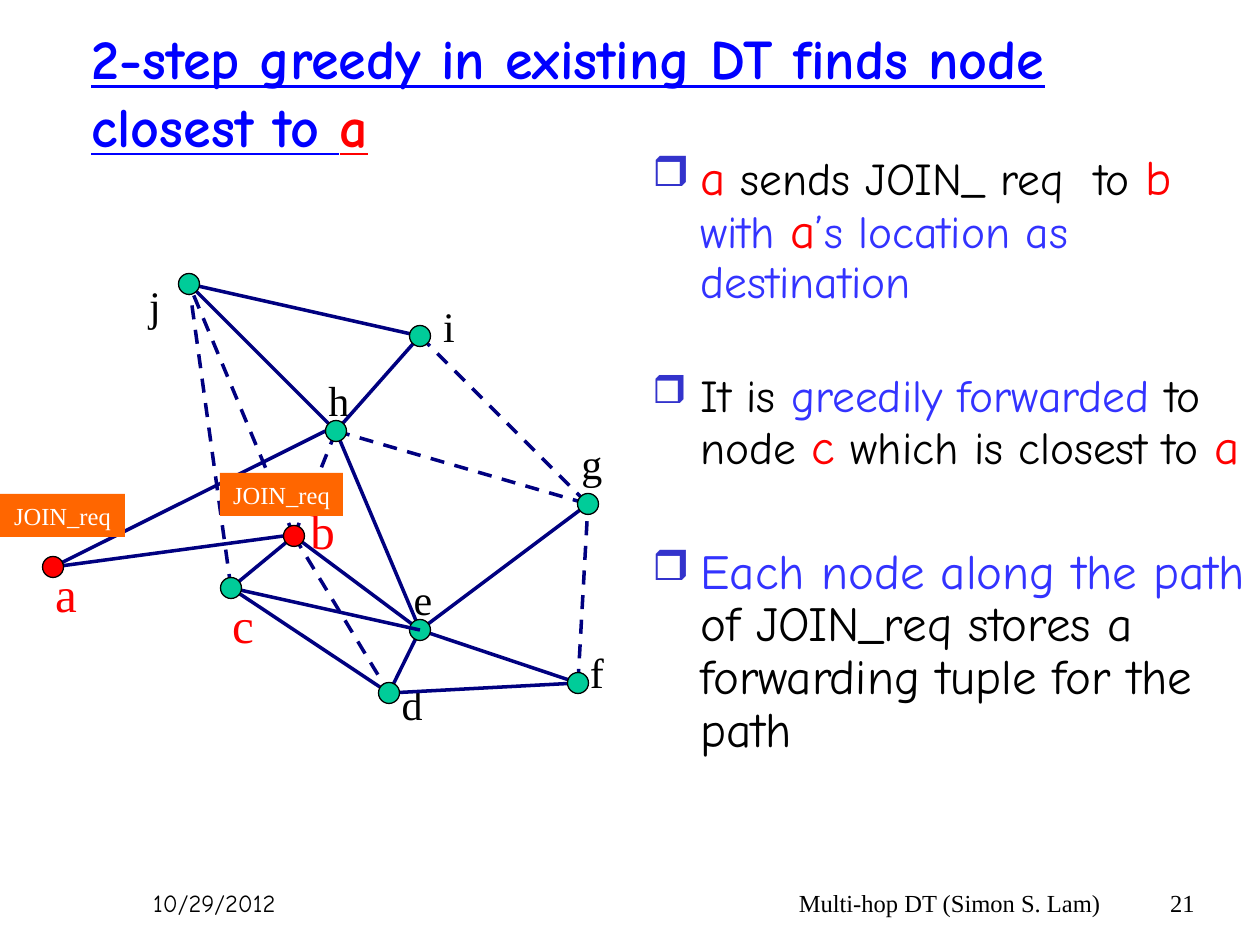
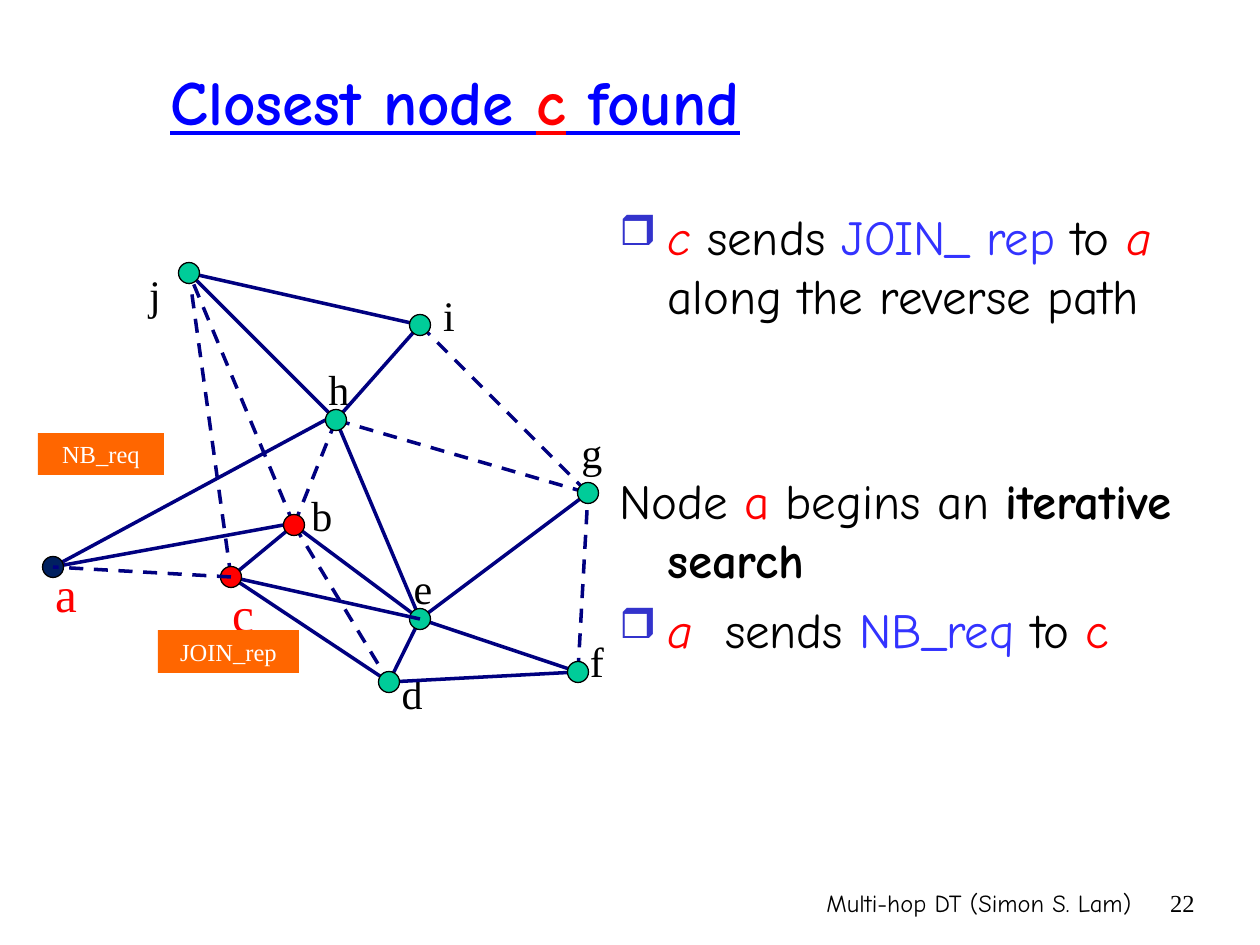
from lxml import etree
from pptx import Presentation
from pptx.dml.color import RGBColor
from pptx.enum.dml import MSO_LINE
from pptx.enum.shapes import MSO_CONNECTOR, MSO_SHAPE
from pptx.enum.text import MSO_ANCHOR, PP_ALIGN
from pptx.oxml.ns import qn
from pptx.util import Emu, Pt

LEFT, CENTER, RIGHT = PP_ALIGN.LEFT, PP_ALIGN.CENTER, PP_ALIGN.RIGHT
TOP, MIDDLE = MSO_ANCHOR.TOP, MSO_ANCHOR.MIDDLE
STRAIGHT, DASH = MSO_CONNECTOR.STRAIGHT, MSO_LINE.DASH
OVAL, RECTANGLE = MSO_SHAPE.OVAL, MSO_SHAPE.RECTANGLE

EMU_PER_PX = 914400 / 126
COMIC, TIMES = "Comic Neue", "Times New Roman"
COLORS = {
    "title": "0000FF", "red": "FF0000", "blue": "3333FF", "black": "000000",
    "white": "FFFFFF", "bullet": "3333CC", "edge": "000080",
    "green": "00CC99", "navy": "002060", "tag": "FF6600",
}

# Node name: centre x, centre y, label centre x, label top
NODES = {
    "d": (389, 693, 412, 672), "f": (578, 683, 597, 640),
    "e": (420, 630, 423, 567), "g": (588, 504, 592, 431),
    "i": (420, 336, 449, 294), "j": (189, 284, 155, 273),
    "c": (231, 588, 243, 588), "h": (336, 431, 339, 368),
    "b": (294, 536, 322, 494),
}
JOINING = (53, 567, 66, 557)
DOT = 21
SOLID_EDGES = "hj cd cb be ed he df ef eg hi ji".split()
DASHED_EDGES = "cj bj bh bd fg hg ig".split()

# Run formats of the body text
RED, BLUE = {"color": "red"}, {"color": "blue"}
BIG_RED = {"color": "red", "size": 28}
ITALIC_RED = {"color": "red", "italic": True}
BOLD = {"bold": True}


def px(*lengths):
    return [Emu(round(length * EMU_PER_PX)) for length in lengths]


def rgb(name):
    return RGBColor.from_string(COLORS[name])


def format_run(run, font=TIMES, size=14, color="black", bold=False,
               italic=False, underline=False):
    run.font.name, run.font.size = font, Pt(size)
    run.font.color.rgb = rgb(color)
    run.font.bold, run.font.italic = bold, italic
    run.font.underline = underline


def add_runs(paragraph, runs, **style):
    """Each run is a string or a (string, format changes) pair."""
    for part in runs:
        words, changes = (part, {}) if isinstance(part, str) else part
        run = paragraph.add_run()
        run.text = words
        format_run(run, **{**style, **changes})


def add_text(slide, box, runs, align=LEFT, anchor=TOP, wrap=True, **style):
    frame = slide.shapes.add_textbox(*px(*box)).text_frame
    frame.word_wrap, frame.vertical_anchor = wrap, anchor
    frame.paragraphs[0].alignment = align
    add_runs(frame.paragraphs[0], runs, **style)
    return frame


def hang_indent(paragraph, bulleted):
    properties = paragraph._p.get_or_add_pPr()
    indent = px(48)[0]
    properties.set("marL", str(indent))
    properties.set("indent", str(-indent))
    if bulleted:
        color = etree.SubElement(properties, qn("a:buClr"))
        etree.SubElement(color, qn("a:srgbClr"), val=COLORS["bullet"])
        etree.SubElement(properties, qn("a:buSzPct"), val="85000")
        etree.SubElement(properties, qn("a:buChar"), char="❒")


def add_points(slide, box, points, line_spacing, size):
    """Each point is (space before in points, bulleted, runs)."""
    frame = add_text(slide, box, [])
    for number, (space, bulleted, runs) in enumerate(points):
        point = frame.add_paragraph() if number else frame.paragraphs[0]
        point.space_before, point.line_spacing = Pt(space), line_spacing
        hang_indent(point, bulleted)
        add_runs(point, runs, font=COMIC, size=size)


def add_title(slide, box, runs, size):
    add_text(slide, box, runs, anchor=MIDDLE, font=COMIC, size=size,
             color="title", bold=True, underline=True)


def add_footer(slide, right_edge, font, page):
    add_text(slide, (right_edge - 736, 882, 736, 63),
             ["Multi-hop DT (Simon S. Lam)"], align=RIGHT, font=font)
    add_text(slide, (1144, 882, 63, 63), [page], align=RIGHT)


def add_edge(slide, start, end, dashed=False):
    edge = slide.shapes.add_connector(STRAIGHT, *px(*start, *end))
    edge.line.color.rgb, edge.line.width = rgb("edge"), Pt(2)
    if dashed:
        edge.line.dash_style = DASH
    etree.SubElement(edge._element.spPr, qn("a:effectLst"))


def add_filled(slide, kind, box, fill):
    shape = slide.shapes.add_shape(kind, *px(*box))
    shape.shadow.inherit = False
    shape.fill.solid()
    shape.fill.fore_color.rgb = rgb(fill)
    return shape


def add_dot(slide, center, fill):
    x, y = center
    dot = add_filled(slide, OVAL, (x - DOT / 2, y - DOT / 2, DOT, DOT), fill)
    dot.line.color.rgb, dot.line.width = rgb("black"), Pt(0.75)


def add_tag(slide, box, message):
    tag = add_filled(slide, RECTANGLE, box, "tag")
    tag.line.fill.background()
    tag.text_frame.paragraphs[0].alignment = CENTER
    add_runs(tag.text_frame.paragraphs[0], [message], color="white")


def draw_network(slide, rise, dot_fills, red_labels):
    """Draw the triangulation, moved up by rise, and the joining node a."""
    nodes = {name: (x, y - rise, label_x, top - rise)
             for name, (x, y, label_x, top) in NODES.items()}
    nodes["a"] = JOINING
    centers = {name: place[:2] for name, place in nodes.items()}

    # Labels
    for name, (_, _, label_x, top) in nodes.items():
        color, size = ("red", 28) if name in red_labels else ("black", 24)
        add_text(slide, (label_x - 24, top, 48, 63), [name], align=CENTER,
                 wrap=False, color=color, size=size)

    # Edges, with those of a ending at the left of its neighbours
    for edges, dashed in ((DASHED_EDGES, True), (SOLID_EDGES, False)):
        for start, end in edges:
            add_edge(slide, centers[start], centers[end], dashed)
    for neighbour in "bh":
        x, y = centers[neighbour]
        add_edge(slide, centers["a"], (x - DOT / 2, y))

    # Dots; edge c-e lies over e and under c
    for name, center in centers.items():
        if name == "c":
            add_edge(slide, center, centers["e"])
        add_dot(slide, center, dot_fills.get(name, "green"))
    return centers


def build_greedy_slide(slide):
    add_title(slide, (79, 44, 1101, 94),
              ["2-step greedy in existing DT finds node closest to ",
               ("a", RED)], size=32)
    add_points(slide, (640, 147, 620, 797), [
        (5, True, [("a", BIG_RED), " sends JOIN_ req  to ", ("b", BIG_RED),
                   " ", ("with ", BLUE), ("a", BIG_RED),
                   ("’s location as destination", BLUE)]),
        (37, True, ["It is ", ("greedily forwarded ", BLUE), "to node ",
                    ("c", BIG_RED), " which is closest to ",
                    ("a", BIG_RED)]),
        (41, True, [("Each node along the path ",
                     {"color": "blue", "size": 28}),
                    ("of JOIN_req stores a forwarding tuple for the path",
                     {"size": 28})]),
    ], line_spacing=0.9, size=26)
    draw_network(slide, 0, {"a": "red", "b": "red"}, "abc")
    add_tag(slide, (0, 494, 125, 43), "JOIN_req")
    add_tag(slide, (220, 473, 123, 43), "JOIN_req")
    add_text(slide, (54, 882, 234, 63), ["10/29/2012"], align=RIGHT,
             font=COMIC)
    add_footer(slide, 1113, TIMES, "21")


def build_found_slide(slide):
    add_title(slide, (158, 42, 1102, 116),
              ["Closest node ", ("c", RED), " found"], size=36)
    add_points(slide, (607, 200, 620, 567), [
        (6, True, [("c", ITALIC_RED), " sends ", ("JOIN_ rep ", BLUE), "to ",
                   ("a", ITALIC_RED), " along the reverse path"]),
        (84, False, ["Node ", ("a", RED), " begins an ",
                     ("iterative search", BOLD)]),
        (6, True, [("a ", ITALIC_RED), " sends ", ("NB_req", BLUE), " to ",
                   ("c", RED)]),
    ], line_spacing=1.0, size=28)
    centers = draw_network(
        slide, 11, {"a": "navy", "b": "red", "c": "red"}, "ac")
    add_edge(slide, centers["c"], centers["a"], dashed=True)
    add_tag(slide, (158, 630, 141, 43), "JOIN_rep")
    add_tag(slide, (38, 433, 126, 42), "NB_req")
    add_footer(slide, 1144, COMIC, "22")


def main():
    deck = Presentation()
    deck.slide_width, deck.slide_height = px(1260, 945)
    blank = deck.slide_layouts[6]
    for build in (build_greedy_slide, build_found_slide):
        build(deck.slides.add_slide(blank))
    deck.save("out.pptx")


if __name__ == "__main__":
    main()
